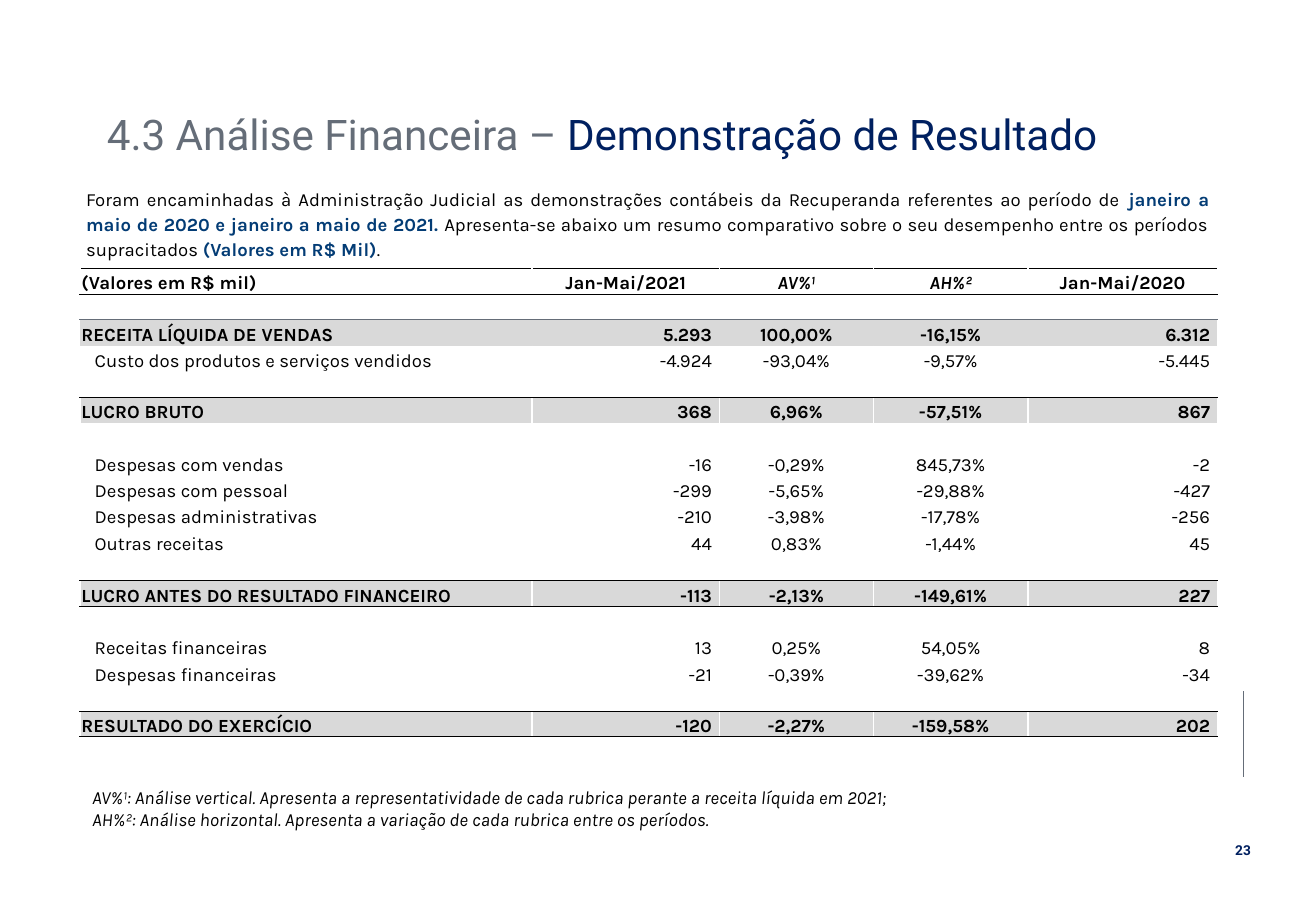
from dataclasses import dataclass

from lxml.etree import SubElement
from pptx import Presentation
from pptx.dml.color import RGBColor
from pptx.enum.shapes import MSO_CONNECTOR
from pptx.enum.text import MSO_ANCHOR, PP_ALIGN
from pptx.oxml.ns import qn
from pptx.util import Inches, Pt


@dataclass(frozen=True)
class Theme:
    navy: str = "002060"
    blue: str = "033C75"
    gray: str = "656D78"
    black: str = "000000"
    white: str = "FFFFFF"
    band: str = "D9D9D9"
    heading_font: str = "Roboto"
    body_font: str = "Karla"
    title_size: float = 25
    body_size: float = 11
    number_size: float = 8.1


theme = Theme()


def add_run(paragraph, text, color=theme.black, name=theme.body_font,
            size=theme.body_size, bold=False, italic=False):
    run = paragraph.add_run()
    run.text = text
    font_format = {"name": name, "size": Pt(size), "bold": bold, "italic": italic}
    for attribute, value in font_format.items():
        setattr(run.font, attribute, value)
    run.font.color.rgb = RGBColor.from_string(color)


def set_border(cell, side, line):
    """Draw one cell edge; line is (colour, points), or None for no line."""
    color, width = line or (None, 0)
    border = SubElement(cell._tc.get_or_add_tcPr(), qn(f"a:ln{side}"), w=str(Pt(width)))
    if line:
        fill = SubElement(border, qn("a:solidFill"))
        SubElement(fill, qn("a:srgbClr"), val=color)
    else:
        SubElement(border, qn("a:noFill"))


presentation = Presentation()
presentation.slide_width = Inches(10.83)
presentation.slide_height = Inches(7.5)
slide = presentation.slides.add_slide(presentation.slide_layouts[5])

# Title
title = slide.shapes.title
title_place = {"left": 0.78, "top": 0.86, "width": 8.79, "height": 0.53}
for attribute, value in title_place.items():
    setattr(title, attribute, Inches(value))
title.text_frame.vertical_anchor = MSO_ANCHOR.MIDDLE
paragraph = title.text_frame.paragraphs[0]
paragraph.alignment = PP_ALIGN.LEFT
paragraph.line_spacing = 0.9
for text, color in [("4.3 Análise Financeira – ", theme.gray),
                    ("Demonstração de Resultado", theme.navy)]:
    add_run(paragraph, text, color, theme.heading_font, theme.title_size)

# Introduction
introduction = slide.shapes.add_textbox(Inches(0.61), Inches(1.47), Inches(9.44), Inches(0.51))
introduction.text_frame.word_wrap = True
paragraph = introduction.text_frame.paragraphs[0]
paragraph.alignment = PP_ALIGN.JUSTIFY
paragraph.line_spacing = 1.14
for text, strong in [
    ("Foram encaminhadas à Administração Judicial as demonstrações contábeis da "
     "Recuperanda referentes ao período de ", False),
    ("janeiro a maio de 2020 e janeiro a maio de 2021. ", True),
    ("Apresenta-se abaixo um resumo comparativo sobre o seu desempenho entre os "
     "períodos supracitados ", False),
    ("(Valores em R$ Mil)", True),
    (".", False),
]:
    add_run(paragraph, text, theme.blue if strong else theme.black, bold=strong)

# Income statement
HEADER, TOTAL, DETAIL, GAP = "header", "total", "detail", "gap"
blank = (GAP, [""] * 5)
statement = [
    (HEADER, ["(Valores em R$ mil)", "Jan-Mai/2021", "AV%¹", "AH%²", "Jan-Mai/2020"]),
    blank,
    (TOTAL, ["RECEITA LÍQUIDA DE VENDAS", "5.293", "100,00%", "-16,15%", "6.312"]),
    (DETAIL, ["Custo dos produtos e serviços vendidos", "-4.924", "-93,04%", "-9,57%", "-5.445"]),
    blank,
    (TOTAL, ["LUCRO BRUTO", "368", "6,96%", "-57,51%", "867"]),
    blank,
    (DETAIL, ["Despesas com vendas", "-16", "-0,29%", "845,73%", "-2"]),
    (DETAIL, ["Despesas com pessoal", "-299", "-5,65%", "-29,88%", "-427"]),
    (DETAIL, ["Despesas administrativas", "-210", "-3,98%", "-17,78%", "-256"]),
    (DETAIL, ["Outras receitas", "44", "0,83%", "-1,44%", "45"]),
    blank,
    (TOTAL, ["LUCRO ANTES DO RESULTADO FINANCEIRO", "-113", "-2,13%", "-149,61%", "227"]),
    blank,
    (DETAIL, ["Receitas financeiras", "13", "0,25%", "54,05%", "8"]),
    (DETAIL, ["Despesas financeiras", "-21", "-0,39%", "-39,62%", "-34"]),
    blank,
    (TOTAL, ["RESULTADO DO EXERCÍCIO", "-120", "-2,27%", "-159,58%", "202"]),
]
thin, thick = (theme.black, 0.5), (theme.black, 1)
rules = {0: thin, 1: thin, 2: (theme.gray, 1), 5: thin, 12: thin, 13: thick, 17: thin, 18: thin}
revenue_row = 2
short_rows = {0, 1, 4, 5, 11, 16, 17}
table_height, short_height = 3.86, 0.21
tall_height = (table_height - short_height * len(short_rows)) / (len(statement) - len(short_rows))
alignments = [PP_ALIGN.LEFT, PP_ALIGN.RIGHT, PP_ALIGN.CENTER, PP_ALIGN.CENTER, PP_ALIGN.RIGHT]

table = slide.shapes.add_table(len(statement), 5, Inches(0.66), Inches(2.21),
                               Inches(9.36), Inches(table_height)).table
table.first_row = table.horz_banding = False
for column, width in zip(table.columns, [3.72, 1.54, 1.27, 1.27, 1.56]):
    column.width = Inches(width)

for row, (kind, texts) in enumerate(statement):
    table.rows[row].height = Inches(short_height if row in short_rows else tall_height)
    divider = None if row == revenue_row else (theme.white, 1)
    for column, text in enumerate(texts):
        cell = table.cell(row, column)
        alignment = alignments[column]
        if kind == HEADER and column:
            alignment = PP_ALIGN.CENTER
        cell_format = {
            "margin_left": Inches(0.12 if kind == DETAIL and column == 0 else 0.01),
            "margin_right": Inches(0.06 if alignment == PP_ALIGN.RIGHT else 0.01),
            "margin_top": Inches(0.01),
            "margin_bottom": Inches(0),
            "vertical_anchor": MSO_ANCHOR.BOTTOM,
        }
        for attribute, value in cell_format.items():
            setattr(cell, attribute, value)
        for side, line in [("L", divider), ("R", divider),
                           ("T", rules.get(row)), ("B", rules.get(row + 1))]:
            set_border(cell, side, line)
        if kind == TOTAL:
            cell.fill.solid()
            cell.fill.fore_color.rgb = RGBColor.from_string(theme.band)
        else:
            cell.fill.background()
        paragraph = cell.text_frame.paragraphs[0]
        paragraph.alignment = alignment
        if text:
            add_run(paragraph, text, bold=kind in (HEADER, TOTAL),
                    italic=kind == HEADER and column in (2, 3))
        else:
            SubElement(paragraph._p, qn("a:endParaRPr"), sz=str(theme.body_size * 100))

# Notes on the two percentages
notes = slide.shapes.add_textbox(Inches(0.66), Inches(6.42), Inches(9.36), Inches(0.47)).text_frame
notes.word_wrap = True
add_run(notes.paragraphs[0], "AV%¹: Análise vertical. Apresenta a representatividade de cada "
        "rubrica perante a receita líquida em 2021;", italic=True)
add_run(notes.add_paragraph(), "AH%²: Análise horizontal. Apresenta a variação de cada "
        "rubrica entre os períodos.", italic=True)

# Page number and its rule
page_rule = slide.shapes.add_connector(MSO_CONNECTOR.STRAIGHT, Inches(10.23), Inches(5.69),
                                       Inches(10.23), Inches(6.4))
page_rule.line.color.rgb = RGBColor.from_string(theme.gray)
page_rule.line.width = Pt(0.5)
SubElement(page_rule._element.spPr, qn("a:effectLst"))

page_number = slide.shapes.add_textbox(Inches(10.06), Inches(6.88), Inches(0.34), Inches(0.24))
page_number.text_frame.word_wrap = False
paragraph = page_number.text_frame.paragraphs[0]
paragraph.alignment = PP_ALIGN.CENTER
add_run(paragraph, "23", theme.navy, theme.heading_font, theme.number_size, bold=True)

presentation.save("out.pptx")
